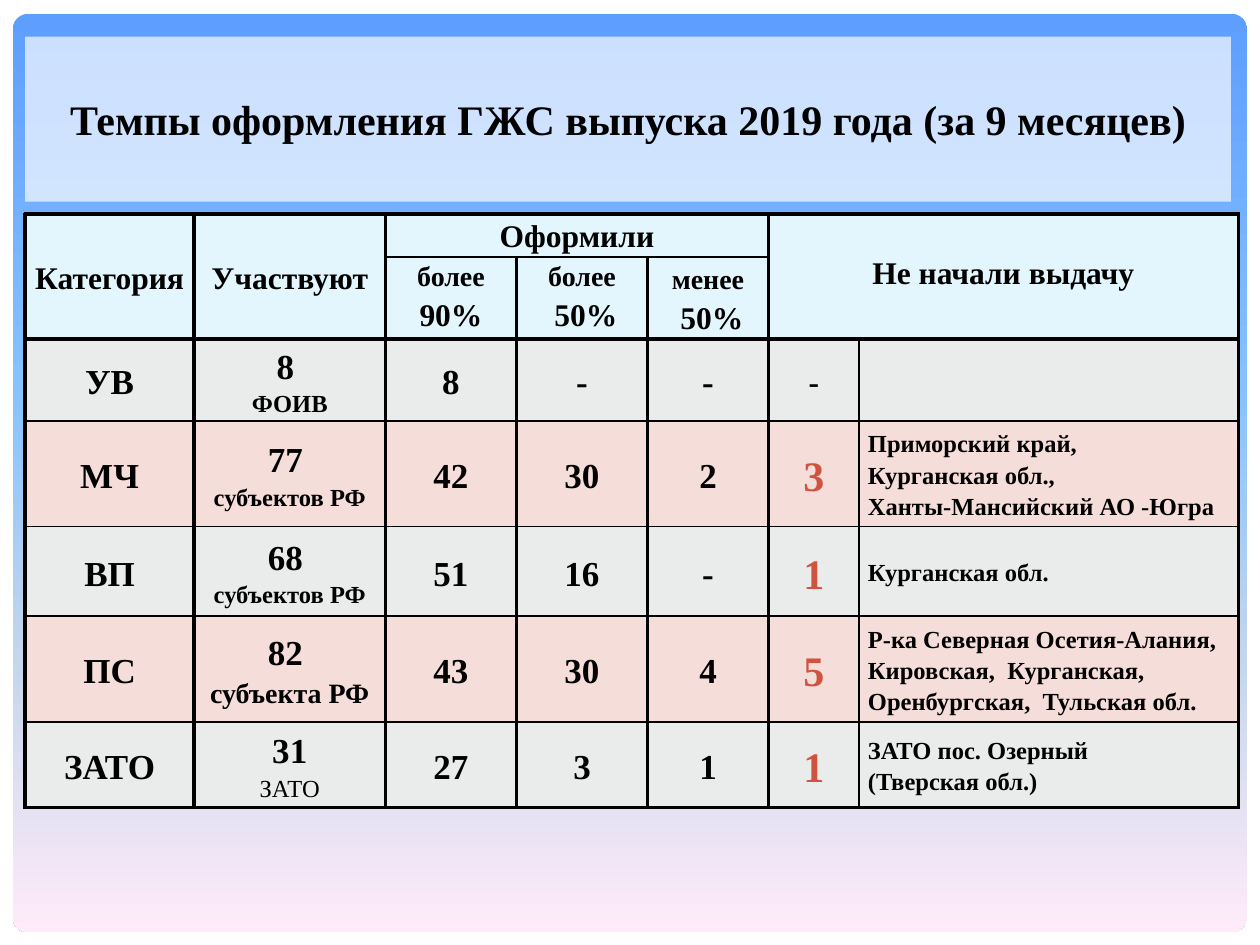
from lxml import etree
from pptx import Presentation
from pptx import util as u
from pptx.dml.color import RGBColor
from pptx.enum import shapes, text
from pptx.oxml.ns import qn

HUES = {"ink": "000000", "white": "FFFFFF", "red": "CF543F",
        "head": "E3F6FD", "grey": "E9ECEB", "rose": "F5DDD9"}
STOPS = [(0, "5E9EFF"), (40, "85C2FF"), (70, "C4D6EB"), (100, "FFEBFA")]
COLS = [1.34, 1.52, 1.04, 1.04, 0.96, 0.72, 3.01]
ROWS = [0.34, 0.65, 0.65, 0.84, 0.71, 0.84, 0.68]
UPRIGHT = [2.25, 2.25, 2.25, 1.5, 1.5, 1.5, 1, 2.25]
LEVEL = [2.25, 1.5, 2.25, 1, 1, 1, 1, 2.25]
HEAD = [
    (0, 0, 2, 1, [("Категория", 18)]),
    (0, 1, 2, 1, [("Участвуют", 18)]),
    (0, 2, 1, 3, [("Оформили", 18)]),
    (0, 5, 2, 2, [("Не начали выдачу", 18)]),
    (1, 2, 1, 1, [("более", 16), ("90%", 18)]),
    (1, 3, 1, 1, [("более", 16), (" 50%", 18)]),
    (1, 4, 1, 1, [("менее", 16), (" 50%", 18)]),
]
BODY = [
    ("УВ", "8 ", "ФОИВ", 14, "8", "-", "-", "-", []),
    ("МЧ", "77 ", "субъектов РФ", 14, "42", "30", "2", "3",
     ["Приморский край,", "Курганская обл.,", "Ханты-Мансийский АО -Югра"]),
    ("ВП", "68 ", "субъектов РФ", 14, "51", "16", "-", "1", ["Курганская обл."]),
    ("ПС", "82 ", "субъекта РФ", 16, "43", "30", "4", "5",
     ["Р-ка Северная Осетия-Алания, Кировская,  Курганская, "
      "Оренбургская,  Тульская обл."]),
    ("ЗАТО", "31", "ЗАТО", 14, "27", "3", "1", "1",
     ["ЗАТО пос. Озерный", "(Тверская обл.)"]),
]


class Deck:
    face = "Times New Roman"

    def __init__(self, slide):
        self.slide = slide

    def font(self, para, size, hue="ink", bold=True):
        for run in para.runs:
            font = run.font
            font.name, font.size, font.bold = self.face, u.Pt(size), bold
            font.color.rgb = RGBColor.from_string(HUES[hue])

    def place(self, item, box):
        item.left, item.top, item.width, item.height = map(u.Inches, box)

    def paint(self, item, hue):
        item.fill.solid()
        item.fill.fore_color.rgb = RGBColor.from_string(HUES[hue])

    def panel(self, box, round_by):
        item = self.slide.shapes.add_shape(
            shapes.MSO_SHAPE.ROUNDED_RECTANGLE, *map(u.Inches, box))
        item.adjustments[0] = round_by
        item.shadow.inherit = False
        item.line.fill.background()
        item.fill.gradient()
        item.fill.gradient_angle = 270
        stops = item._element.spPr.find(".//" + qn("a:gsLst"))
        for old in list(stops):
            stops.remove(old)
        for pos, hue in STOPS:
            stop = etree.SubElement(stops, qn("a:gs"), pos=str(pos * 1000))
            etree.SubElement(stop, qn("a:srgbClr"), val=hue)
        self.slide.shapes._spTree.insert(2, item._element)

    def title(self, words, box, alpha):
        item = self.slide.shapes.title
        self.place(item, box)
        self.paint(item, "white")
        tint = item._element.spPr.find(".//" + qn("a:srgbClr"))
        etree.SubElement(tint, qn("a:alpha"), val=str(alpha * 1000))
        frame = item.text_frame
        frame.text = words
        frame.word_wrap = True
        frame.auto_size = text.MSO_AUTO_SIZE.NONE
        frame.vertical_anchor = text.MSO_ANCHOR.MIDDLE
        para = frame.paragraphs[0]
        para.alignment = text.PP_ALIGN.CENTER
        self.font(para, 24)

    def grid(self, left, top):
        frame = self.slide.shapes.add_table(
            len(ROWS), len(COLS), u.Inches(left), u.Inches(top),
            u.Inches(sum(COLS)), u.Inches(sum(ROWS)))
        table = frame.table
        table.first_row = table.horz_banding = False
        for col, width in zip(table.columns, COLS):
            col.width = u.Inches(width)
        for row, height in zip(table.rows, ROWS):
            row.height = u.Inches(height)
        return table

    def edges(self, cell, widths):
        props = cell._tc.get_or_add_tcPr()
        for spot, (side, width) in enumerate(zip("LRTB", widths)):
            line = etree.Element(qn("a:ln" + side), w=str(u.Pt(width)))
            fill = etree.SubElement(line, qn("a:solidFill"))
            etree.SubElement(fill, qn("a:srgbClr"), val=HUES["ink"])
            props.insert(spot, line)

    def cell(self, cell, lines, fill, widths, hue="ink", left=False,
             anchor=text.MSO_ANCHOR.MIDDLE, drop=0, plain=None):
        self.paint(cell, fill)
        self.edges(cell, widths)
        cell.margin_left = cell.margin_right = u.Inches(0.07)
        cell.margin_top, cell.margin_bottom = u.Inches(drop), 0
        cell.vertical_anchor = anchor
        frame = cell.text_frame
        frame.text = "\n".join(words for words, _ in lines)
        for para, (words, size) in zip(frame.paragraphs, lines):
            para.alignment = text.PP_ALIGN.LEFT if left else text.PP_ALIGN.CENTER
            para.line_spacing = 1.15
            self.font(para, size, hue, words != plain)


def main():
    show = Presentation()
    show.slide_width, show.slide_height = u.Inches(10), u.Inches(7.5)
    deck = Deck(show.slides.add_slide(show.slide_layouts[5]))
    deck.panel((0.1, 0.11, 9.8, 7.29), 0.017)
    deck.title("Темпы оформления ГЖС выпуска 2019 года (за 9 месяцев)",
               (0.2, 0.29, 9.57, 1.31), 68)
    table = deck.grid(0.2, 1.7)

    for row, col, high, wide, lines in HEAD:
        cell = table.cell(row, col)
        if high * wide > 1:
            cell.merge(table.cell(row + high - 1, col + wide - 1))
        sides = [2.25 if edge == 5 else UPRIGHT[edge] for edge in (col, col + wide)]
        mid = col < 2 or (row, col) == (1, 4)
        deck.cell(cell, lines, "head", sides + [LEVEL[row], LEVEL[row + high]],
                  anchor=text.MSO_ANCHOR.MIDDLE if mid else text.MSO_ANCHOR.TOP,
                  drop=0.29 if col == 5 else 0)

    for row, (kind, count, unit, size, *marks, late, names) in enumerate(BODY, 2):
        fill = "rose" if row % 2 else "grey"
        none = late == "-"
        cells = [[(kind, 20)], [(count, 20), (unit, size)]]
        cells += [[(mark, 20)] for mark in marks]
        cells += [[(late, 18 if none else 24)], [(name, 14) for name in names]]
        for col, lines in enumerate(cells):
            widths = UPRIGHT[col:col + 2] + LEVEL[row:row + 2]
            deck.cell(table.cell(row, col), lines, fill, widths,
                      hue="red" if col == 5 and not none else "ink",
                      left=col == 6, plain="ЗАТО" if col == 1 else None)

    show.save("out.pptx")


if __name__ == "__main__":
    main()
